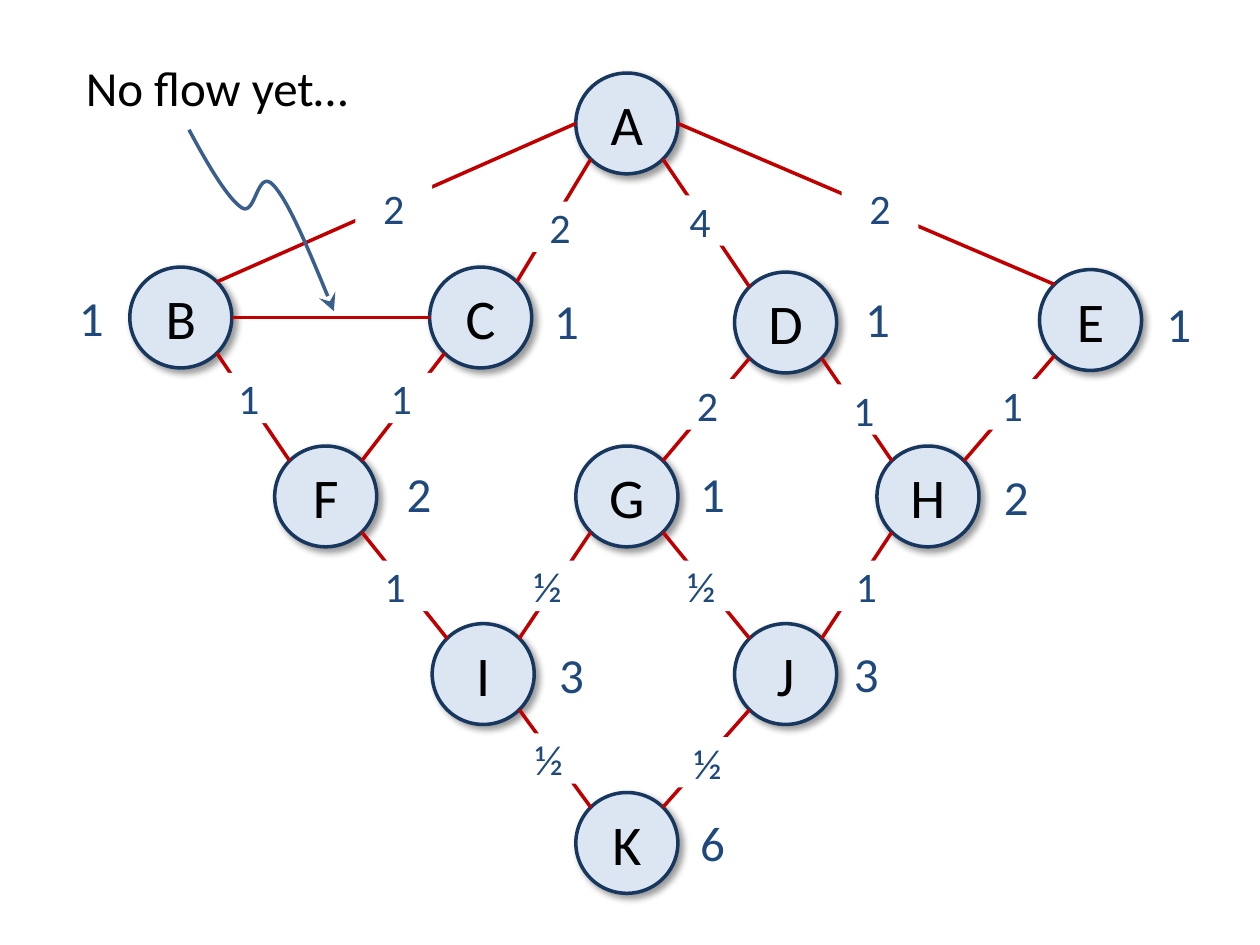
from lxml import etree
from pptx import Presentation
from pptx.dml.color import RGBColor
from pptx.enum import shapes, text
from pptx.oxml import parse_xml
from pptx.oxml.ns import nsdecls, qn
from pptx.util import Inches, Pt

BLACK = RGBColor(0, 0, 0)
WHITE = RGBColor(255, 255, 255)
PALE = RGBColor(0xDC, 0xE6, 0xF2)
NAVY = RGBColor(0x17, 0x37, 0x5E)
BLUE = RGBColor(0x1F, 0x49, 0x7D)
STEEL = RGBColor(0x3A, 0x5F, 0x8C)
RED = RGBColor(0xC0, 0, 0)

NODE_W, NODE_H = 0.81, 0.8
TAG_W, COUNT_H, FLOW_H = 0.61, 0.57, 0.4

# name: left, top
NODES = {
    "A": (4.57, 0.58),
    "B": (1.03, 2.12), "C": (3.41, 2.12), "D": (5.83, 2.16), "E": (8.25, 2.14),
    "F": (2.18, 3.54), "G": (4.57, 3.54), "H": (6.96, 3.54),
    "I": (3.43, 4.95), "J": (5.83, 4.95),
    "K": (4.57, 6.29),
}
# shortest paths to each node: count, left, top
COUNTS = [
    ("1", 0.42, 2.23), ("1", 4.19, 2.26), ("1", 6.66, 2.24), ("1", 9.05, 2.28),
    ("2", 3.02, 3.63), ("1", 5.35, 3.63), ("2", 7.76, 3.65),
    ("3", 4.23, 5.07), ("3", 6.57, 5.06), ("6", 5.35, 6.4),
]
# from node, side, to node, side, then flow, left, top of its label
EDGES = [
    ("A", "W", "B", "NE", "2", 2.82, 1.45),
    ("A", "SW", "C", "NE", "2", 4.14, 1.6),
    ("A", "SE", "D", "NW", "4", 5.25, 1.55),
    ("A", "E", "E", "NW", "2", 6.68, 1.45),
    ("B", "E", "C", "W", None, 0, 0),
    ("B", "SE", "F", "NW", "1", 1.67, 2.96),
    ("C", "SW", "F", "NE", "1", 2.88, 2.96),
    ("D", "SW", "G", "NE", "2", 5.31, 3.01),
    ("D", "SE", "H", "NW", "1", 6.55, 3.05),
    ("E", "SW", "H", "NE", "1", 7.73, 3.01),
    ("F", "SE", "I", "NW", "1", 2.83, 4.45),
    ("G", "SW", "I", "NE", "½ ", 4.08, 4.45),
    ("G", "SE", "J", "NW", "½ ", 5.3, 4.45),
    ("H", "SW", "J", "NE", "1", 6.57, 4.45),
    ("I", "SE", "K", "NW", "½ ", 4.09, 5.82),
    ("J", "SW", "K", "NE", "½ ", 5.35, 5.85),
]
# start point, then two control points and an end point for each bend
CURVE = [
    (1.5, 1.03),
    (1.65, 1.31), (1.81, 1.58), (1.92, 1.65),
    (2.03, 1.72), (2.04, 1.33), (2.17, 1.47),
    (2.29, 1.6), (2.47, 2.03), (2.65, 2.47),
]

prs = Presentation()
prs.slide_width, prs.slide_height = Inches(10), Inches(7.5)
slide = prs.slides.add_slide(prs.slide_layouts[6])
tree = slide.shapes


def write(shape, words, size, color):
    para = shape.text_frame.paragraphs[0]
    para.text = words
    para.alignment = text.PP_ALIGN.CENTER
    font = para.font
    font.name, font.size, font.color.rgb = "Calibri", Pt(size), color


def stroke(shape, color):
    shape.line.color.rgb = color
    shape.line.width = Pt(2)


def add_node(name, left, top):
    node = tree.add_shape(shapes.MSO_SHAPE.OVAL, *map(Inches, (left, top, NODE_W, NODE_H)))
    node.fill.solid()
    node.fill.fore_color.rgb = PALE
    stroke(node, NAVY)
    node.shadow.inherit = False
    node._element.spPr.find(qn("a:effectLst")).append(parse_xml(
        f'<a:outerShdw {nsdecls("a")} blurRad="{Pt(4)}" dist="{Pt(3)}" dir="2700000" '
        'algn="tl" rotWithShape="0"><a:srgbClr val="000000"><a:alpha val="40000"/>'
        '</a:srgbClr></a:outerShdw>'))
    frame = node.text_frame
    frame.margin_left = frame.margin_right = 0
    frame.vertical_anchor = text.MSO_ANCHOR.MIDDLE
    write(node, name, 32, BLACK)


def rim(name, side):
    """Point on a node's outline in a compass direction."""
    reach = 0.5 if len(side) == 1 else 0.5 * 0.5 ** 0.5
    across = ("E" in side) - ("W" in side)
    down = ("S" in side) - ("N" in side)
    left, top = NODES[name]
    return (Inches(left + NODE_W * (0.5 + reach * across)),
            Inches(top + NODE_H * (0.5 + reach * down)))


def add_edge(start, out, end, into):
    edge = tree.add_connector(shapes.MSO_CONNECTOR.STRAIGHT, *rim(start, out), *rim(end, into))
    stroke(edge, RED)
    etree.SubElement(edge._element.spPr, qn("a:effectLst"))


def add_label(words, left, top, width, height, color=BLUE):
    box = tree.add_textbox(*map(Inches, (left, top, width, height)))
    box.text_frame.word_wrap = True
    write(box, words, 28, color)


def add_flow(words, left, top):
    box = tree.add_shape(shapes.MSO_SHAPE.RECTANGLE, *map(Inches, (left, top, TAG_W, FLOW_H)))
    box.fill.solid()
    box.fill.fore_color.rgb = WHITE
    box.line.fill.background()
    box.shadow.inherit = False
    frame = box.text_frame
    frame.margin_top = frame.margin_bottom = 0
    frame.vertical_anchor = text.MSO_ANCHOR.TOP
    write(box, words, 24, BLUE)


def add_curve(points):
    """Draw a chain of cubic bends that ends in an arrowhead."""
    spots = [(Inches(x), Inches(y)) for x, y in points]
    maker = tree.build_freeform(*spots[0])
    maker.add_line_segments(spots[1:], close=False)
    curve = maker.convert_to_shape()
    curve.fill.background()
    stroke(curve, STEEL)
    curve.shadow.inherit = False
    legs = list(curve._element.iter(qn("a:lnTo")))
    route = legs[0].getparent()
    for i in range(0, len(legs), 3):
        bend = etree.SubElement(route, qn("a:cubicBezTo"))
        for leg in legs[i:i + 3]:
            bend.append(leg[0])
            route.remove(leg)
    etree.SubElement(curve.line._get_or_add_ln(), qn("a:tailEnd"),
                     type="stealth", w="lg", len="lg")


for name, spot in NODES.items():
    add_node(name, *spot)
for edge in EDGES:
    add_edge(*edge[:4])
for count, left, top in COUNTS:
    add_label(count, left, top, TAG_W, COUNT_H)
add_label("No flow yet…", 0.25, 0.41, 2.94, COUNT_H, BLACK)
for *_, flow, left, top in EDGES:
    if flow:
        add_flow(flow, left, top)
add_curve(CURVE)

prs.save("out.pptx")
